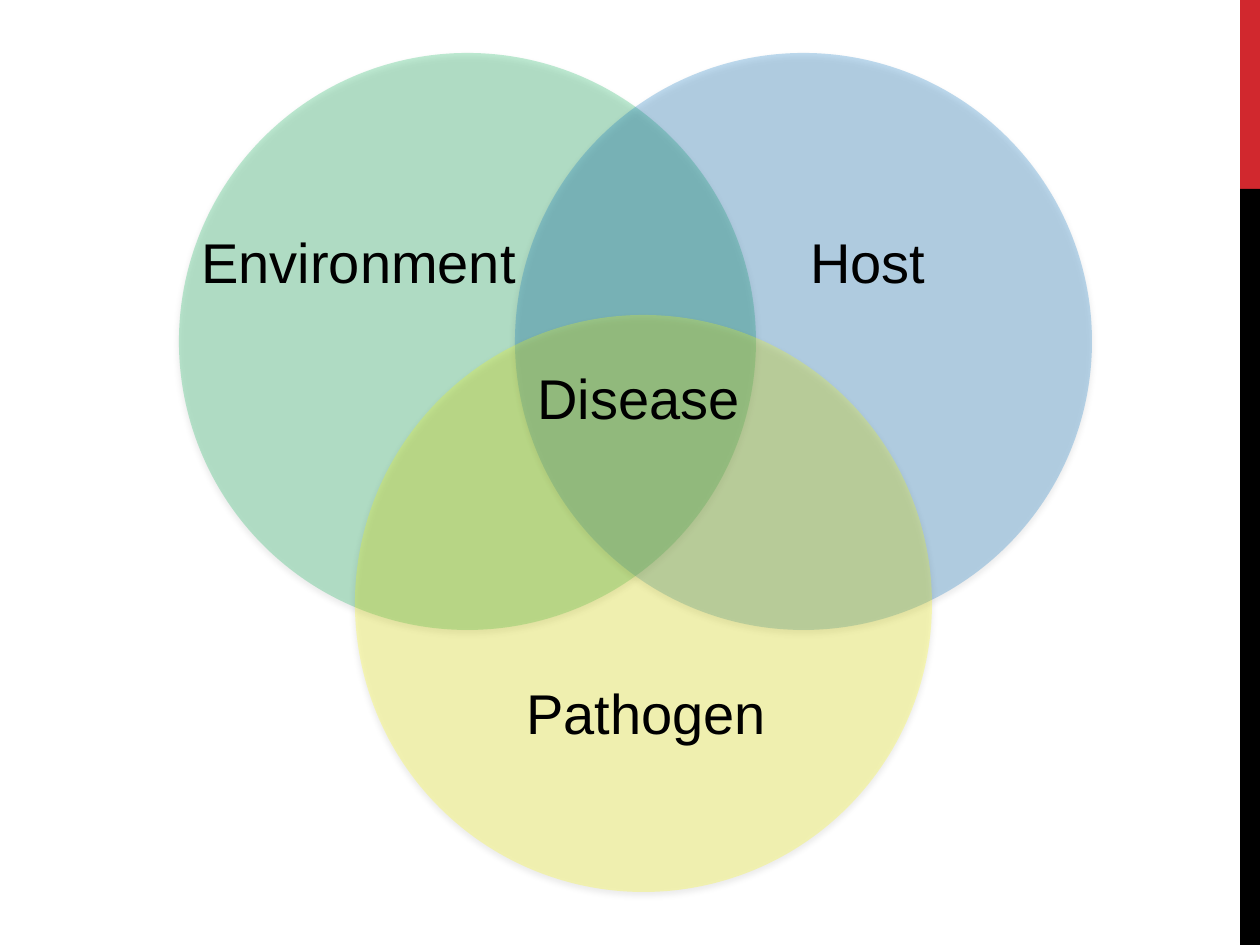
import dataclasses

import lxml.etree
import pptx
import pptx.dml.color
import pptx.enum.shapes
import pptx.enum.text
import pptx.oxml.ns
import pptx.util

PX_PER_INCH = 126
SLIDE_W, SLIDE_H = 1260, 945
BAR_W = 20
CIRCLE = 577
LABEL_H = 81
COLORS = {
    "red": "D1282E",
    "black": "000000",
    "green": "00B050",
    "blue": "0070C0",
    "yellow": "FFFF00",
}
FONT = {"name": "Arial", "size": pptx.util.Pt(32)}
FRAME = {"word_wrap": True, "auto_size": pptx.enum.text.MSO_AUTO_SIZE.SHAPE_TO_FIT_TEXT}
SHADOW = {"blurRad": 3.5, "dist": 2.2}
SHAPES = pptx.enum.shapes.MSO_SHAPE
qn = pptx.oxml.ns.qn


@dataclasses.dataclass
class Block:
    kind: int
    x: int
    y: int
    w: int
    h: int
    color: str


@dataclasses.dataclass
class Label:
    text: str
    x: int
    y: int
    w: int


BARS = [
    Block(SHAPES.RECTANGLE, SLIDE_W - BAR_W, 0, BAR_W, 189, "red"),
    Block(SHAPES.RECTANGLE, SLIDE_W - BAR_W, 189, BAR_W, SLIDE_H - 189, "black"),
]
CIRCLES = [
    Block(SHAPES.OVAL, x, y, CIRCLE, CIRCLE, color)
    for x, y, color in ((179, 53, "green"), (515, 53, "blue"), (355, 315, "yellow"))
]
LABELS = [
    Label("Environment", 189, 221, 357),
    Label("Host", 798, 221, 242),
    Label("Pathogen", 514, 672, 280),
    Label("Disease", 525, 357, 242),
]


def px(*lengths: int) -> list[int]:
    return [round(n * pptx.util.Inches(1) / PX_PER_INCH) for n in lengths]


def rgb(color: str) -> pptx.dml.color.RGBColor:
    return pptx.dml.color.RGBColor.from_string(COLORS[color])


def set_attrs(obj, values: dict) -> None:
    for name, value in values.items():
        setattr(obj, name, value)


def add_alpha(clr, percent: int) -> None:
    lxml.etree.SubElement(clr, qn("a:alpha"), val=str(percent * 1000))


def draw_block(s, block: Block):
    sp = s.shapes.add_shape(block.kind, *px(block.x, block.y, block.w, block.h))
    sp.shadow.inherit = False
    sp.fill.solid()
    sp.fill.fore_color.rgb = rgb(block.color)
    sp.line.fill.background()
    return sp


def draw_circle(s, circle: Block) -> None:
    sp = draw_block(s, circle)
    props = sp._element.spPr
    add_alpha(props.find(qn("a:solidFill"))[0], 25)
    lengths = {name: str(pptx.util.Pt(value)) for name, value in SHADOW.items()}
    shadow = lxml.etree.SubElement(
        props.find(qn("a:effectLst")), qn("a:outerShdw"),
        dir=str(90 * 60000), rotWithShape="0", **lengths,
    )
    add_alpha(lxml.etree.SubElement(shadow, qn("a:srgbClr"), val=COLORS["black"]), 32)


def draw_label(s, label: Label) -> None:
    tf = s.shapes.add_textbox(*px(label.x, label.y, label.w, LABEL_H)).text_frame
    set_attrs(tf, FRAME)
    r = tf.paragraphs[0].add_run()
    r.text = label.text
    set_attrs(r.font, FONT)
    r.font.color.rgb = rgb("black")


def main() -> None:
    prs = pptx.Presentation()
    prs.slide_width, prs.slide_height = px(SLIDE_W, SLIDE_H)
    s = prs.slides.add_slide(prs.slide_layouts[6])
    for bar in BARS:
        draw_block(s, bar)
    for circle in CIRCLES:
        draw_circle(s, circle)
    for label in LABELS:
        draw_label(s, label)
    prs.save("out.pptx")


if __name__ == "__main__":
    main()
